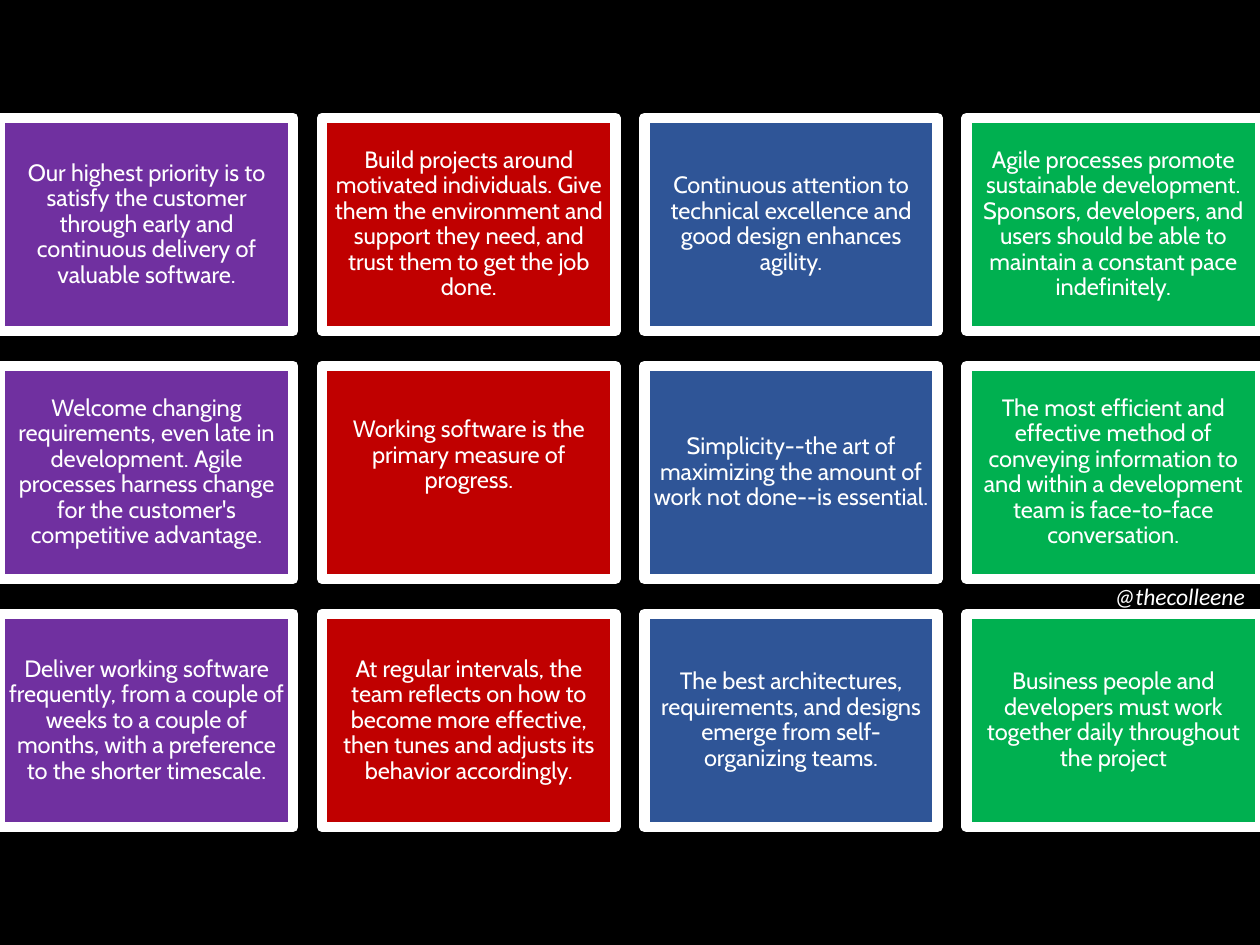
from dataclasses import dataclass

from pptx import Presentation
from pptx.dml.color import RGBColor
from pptx.enum.shapes import MSO_SHAPE
from pptx.enum.text import MSO_ANCHOR, PP_ALIGN
from pptx.util import Pt

RECTANGLE = MSO_SHAPE.RECTANGLE
MIDDLE = MSO_ANCHOR.MIDDLE
CENTER = PP_ALIGN.CENTER
EMU_PER_PX = 914400 / 126


@dataclass(frozen=True)
class Theme:
    """Colours, fonts and type sizes of the slide."""
    background: str = "000000"
    foreground: str = "FFFFFF"
    columns: tuple = ("7030A0", "C00000", "2F5597", "00B050")
    card_font: str = "Cabin"
    handle_font: str = "Calibri"
    text_size: float = 13.5
    border: int = 6
    line_spacing: float = 0.9


THEME = Theme()

PRINCIPLES = (
    (
        "Our highest priority is to satisfy the customer through early and continuous delivery of valuable software.",
        "Build projects around motivated individuals. Give them the environment and support they need, and trust them to get the job done.",
        "Continuous attention to technical excellence and good design enhances agility.",
        "Agile processes promote sustainable development. Sponsors, developers, and users should be able to maintain a constant pace indefinitely.",
    ),
    (
        "Welcome changing requirements, even late in development. Agile processes harness change for the customer's competitive advantage.",
        "Working software is the primary measure of progress.",
        "Simplicity--the art of maximizing the amount of work not done--is essential.",
        "The most efficient and effective method of conveying information to and within a development team is face-to-face conversation.",
    ),
    (
        "Deliver working software frequently, from a couple of weeks to a couple of months, with a preference to the shorter timescale.",
        "At regular intervals, the team reflects on how to become more effective, then tunes and adjusts its behavior accordingly.",
        "The best architectures, requirements, and designs emerge from self-organizing teams.",
        "Business people and developers must work together daily throughout the project",
    ),
)
RAISED_PRINCIPLE = PRINCIPLES[1][1]


def px(length):
    """Turn pixels into EMU."""
    return round(length * EMU_PER_PX)


def rgb(value):
    """Turn a hex string into a colour."""
    return RGBColor.from_string(value)


def style_text(paragraph, font_name):
    """Set the type of every run in a paragraph."""
    for run in paragraph.runs:
        run.font.name = font_name
        run.font.size = Pt(THEME.text_size)
        run.font.color.rgb = rgb(THEME.foreground)


def add_card(slide, box, principle, color):
    """Draw one bordered card with its principle in the given box."""
    card = slide.shapes.add_shape(RECTANGLE, *map(px, box))
    card.shadow.inherit = False
    card.fill.solid()
    card.fill.fore_color.rgb = rgb(color)
    card.line.color.rgb = rgb(THEME.foreground)
    card.line.width = Pt(THEME.border)
    frame = card.text_frame
    frame.word_wrap = True
    frame.vertical_anchor = MIDDLE
    frame.margin_left = frame.margin_right = frame.margin_top = px(8)
    frame.margin_bottom = px(42 if principle == RAISED_PRINCIPLE else 8)
    frame.text = principle
    paragraph = frame.paragraphs[0]
    paragraph.alignment = CENTER
    paragraph.line_spacing = THEME.line_spacing
    style_text(paragraph, THEME.card_font)


def add_card_grid(slide, box, gap_x, gap_y):
    """Spread the principles evenly over the given box."""
    left, top, width, height = box
    columns, rows = len(THEME.columns), len(PRINCIPLES)
    card_width = (width - gap_x * (columns - 1)) / columns
    card_height = (height - gap_y * (rows - 1)) / rows
    for row, principles in enumerate(PRINCIPLES):
        for column, principle in enumerate(principles):
            card_box = (
                left + column * (card_width + gap_x),
                top + row * (card_height + gap_y),
                card_width,
                card_height,
            )
            add_card(slide, card_box, principle, THEME.columns[column])


def add_handle(slide, box):
    """Write the author's handle in the given box."""
    frame = slide.shapes.add_textbox(*map(px, box)).text_frame
    frame.word_wrap = True
    frame.text = "@thecolleene"
    paragraph = frame.paragraphs[0]
    style_text(paragraph, THEME.handle_font)
    paragraph.runs[0].font.italic = True


def main():
    """Build and save the slide."""
    deck = Presentation()
    deck.slide_width, deck.slide_height = px(1260), px(945)
    slide = deck.slides.add_slide(deck.slide_layouts[6])
    background = slide.background.fill
    background.solid()
    background.fore_color.rgb = rgb(THEME.background)
    add_card_grid(slide, (0, 118, 1260, 709), gap_x=29, gap_y=35)
    add_handle(slide, (1102, 576, 157, 71))
    deck.save("out.pptx")


if __name__ == "__main__":
    main()
